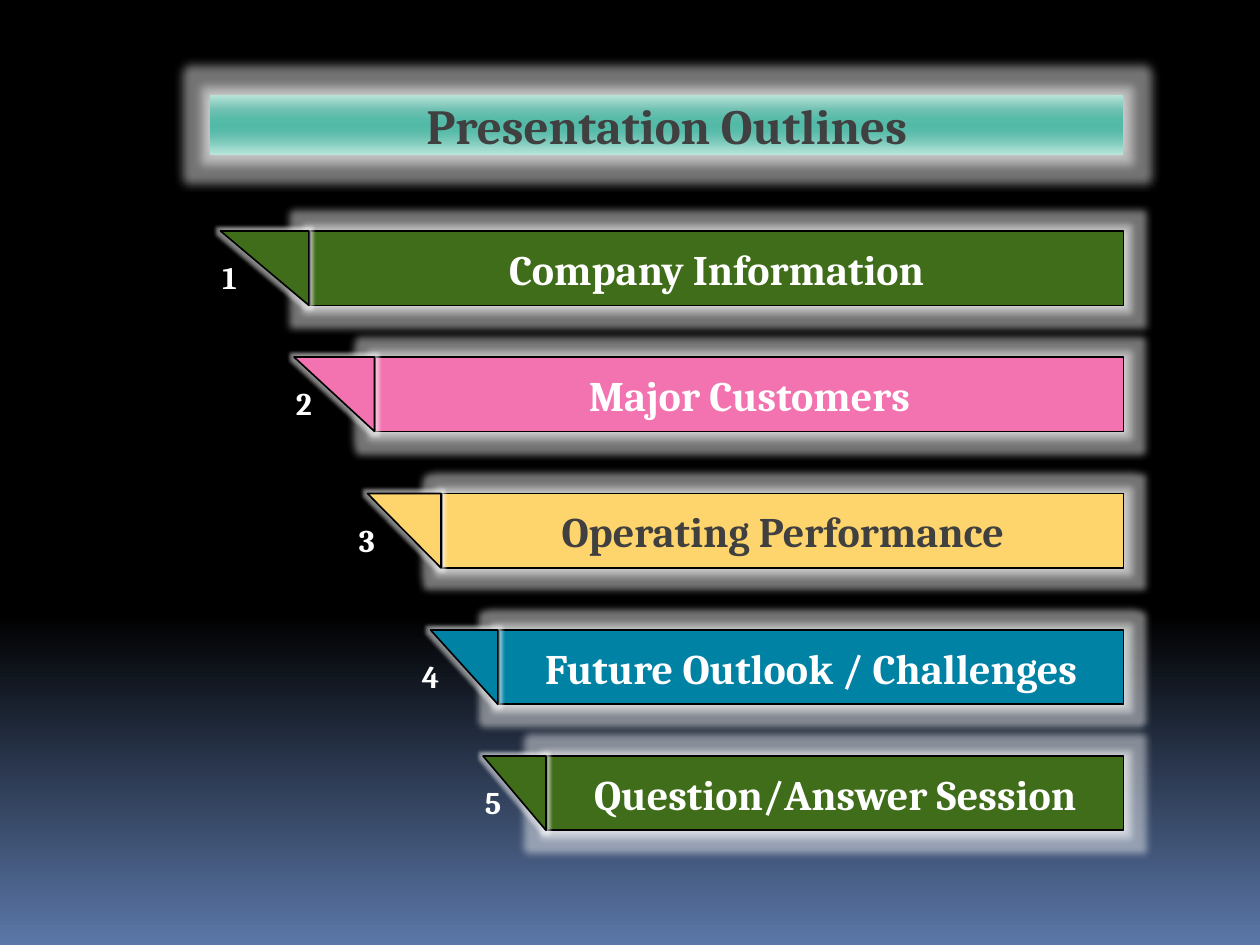
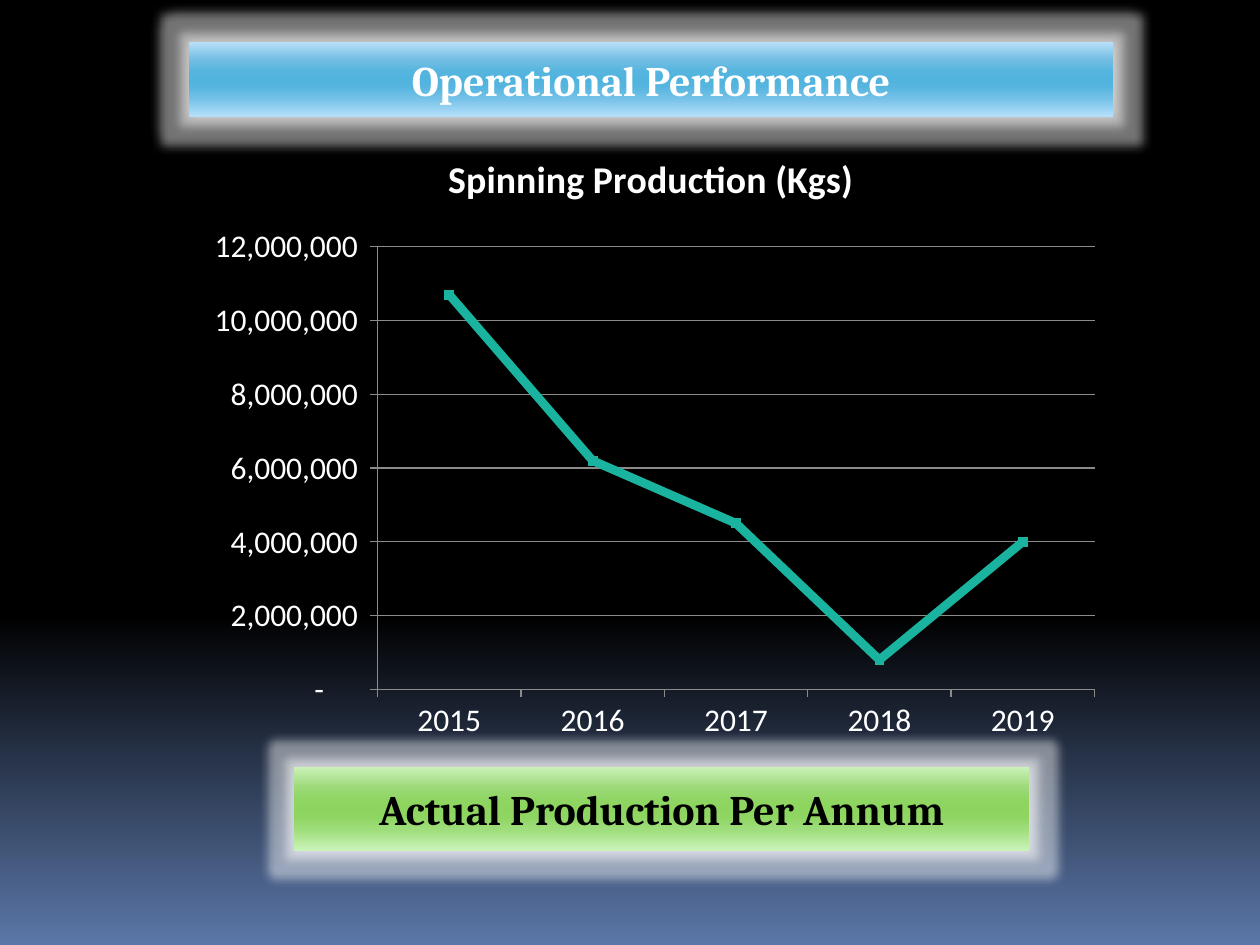
from lxml.etree import SubElement
from pptx import Presentation
from pptx.chart.data import CategoryChartData
from pptx.dml.color import RGBColor
from pptx.enum.chart import XL_CHART_TYPE, XL_MARKER_STYLE, XL_TICK_MARK
from pptx.enum.shapes import MSO_SHAPE
from pptx.enum.text import MSO_ANCHOR, PP_ALIGN
from pptx.oxml.ns import qn
from pptx.util import Pt

WHITE = RGBColor(0xFF, 0xFF, 0xFF)
BLACK = RGBColor(0x00, 0x00, 0x00)
CHARCOAL = RGBColor(0x40, 0x40, 0x40)
GREEN = RGBColor(0x3F, 0x6D, 0x19)
PINK = RGBColor(0xF2, 0x73, 0xAF)
YELLOW = RGBColor(0xFE, 0xD4, 0x6C)
BLUE = RGBColor(0x00, 0x82, 0xA5)
TEAL = RGBColor(0x1A, 0xB3, 0x9F)
GRID_GREY = RGBColor(0x8B, 0x8B, 0x8B)


def gradient(positions, *codes):
    return [(at, RGBColor.from_string(code)) for at, code in zip(positions, codes)]


BANNER_STOPS = (0, 25, 40, 50, 60, 75, 100)
NIGHT = gradient((0, 65, 100), "000000", "000000", "5B77A8")
TEAL_SHEEN = gradient(BANNER_STOPS, "BBE5DB", "71C1B2", "57BBA9", "53BAA8",
                      "57BBA9", "74C6B6", "B9E6DC")
BLUE_SHEEN = gradient(BANNER_STOPS, "B7DFF8", "70BCE2", "55B5DF", "50B4DF",
                      "55B5DF", "72C0E7", "B4DFFB")
GREEN_SHEEN = gradient(BANNER_STOPS, "CCF2BB", "9CD979", "8FD562", "8DD55F",
                       "8FD562", "9EDD7B", "CBF4B9")

HEADING_FONT = "Cambria"
CHART_FONT = "Calibri"
BAR_HEIGHT = 42.5
BAR_RIGHT = 642

# label, fill, text colour, top, flag left, bar left, number left
OUTLINE = [
    ("Company Information", GREEN, WHITE, 132, 126, 177, 120),
    ("Major Customers", PINK, WHITE, 204, 168, 214.5, 162),
    ("Operating Performance", YELLOW, CHARCOAL, 282, 210, 252.5, 198),
    ("Future Outlook / Challenges", BLUE, WHITE, 360, 246, 285, 234),
    ("Question/Answer Session", GREEN, WHITE, 432, 276, 312.5, 270),
]

PRODUCTION = {"2015": 10700000, "2016": 6200000, "2017": 4500000,
              "2018": 800000, "2019": 4000000}


def fill_gradient(fill, owner, stops):
    """Fill from top to bottom with any number of stops."""
    fill.gradient()
    fill.gradient_angle = 270
    stop_list = next(owner.element.iter(qn("a:gsLst")))
    for old_stop in list(stop_list):
        stop_list.remove(old_stop)
    for at, colour in stops:
        stop = SubElement(stop_list, qn("a:gs"), pos=str(at * 1000))
        SubElement(stop, qn("a:srgbClr"), val=str(colour))


def add_halo(shape, glow, blur):
    """Surround the shape with a white glow and a softer white shadow."""
    shape.shadow.inherit = False
    effects = shape.element.spPr.find(qn("a:effectLst"))
    ring = SubElement(effects, qn("a:glow"), rad=str(Pt(glow)))
    haze = SubElement(effects, qn("a:outerShdw"), blurRad=str(Pt(blur)),
                      dist="0", algn="ctr", rotWithShape="0")
    for effect in (ring, haze):
        tint = SubElement(effect, qn("a:srgbClr"), val=str(WHITE))
        SubElement(tint, qn("a:alpha"), val="45000")


def write(shape, text, size, colour, align):
    paragraph = shape.text_frame.paragraphs[0]
    paragraph.alignment = align
    run = paragraph.add_run()
    run.text = text
    font = run.font
    font.name, font.size, font.bold = HEADING_FONT, Pt(size), True
    font.color.rgb = colour


def add_banner(slide, box, text, sheen, colour=WHITE, size=24):
    banner = slide.shapes.add_shape(MSO_SHAPE.RECTANGLE, *map(Pt, box))
    fill_gradient(banner.fill, banner, sheen)
    banner.line.fill.background()
    add_halo(banner, glow=11, blur=5)
    banner.text_frame.vertical_anchor = MSO_ANCHOR.MIDDLE
    write(banner, text, size, colour, PP_ALIGN.CENTER)


def add_outline_row(slide, number, label, fill, colour, top, flag_left, bar_left, number_left):
    row = slide.shapes.add_group_shape()

    def add_part(preset, left, right, glow):
        part = row.shapes.add_shape(preset, Pt(left), Pt(top),
                                    Pt(right - left), Pt(BAR_HEIGHT))
        part.fill.solid()
        part.fill.fore_color.rgb = fill
        part.line.color.rgb = BLACK
        part.line.width = Pt(0.94)
        add_halo(part, glow, blur=3)
        return part

    bar = add_part(MSO_SHAPE.RECTANGLE, bar_left, BAR_RIGHT, glow=8)
    bar.text_frame.vertical_anchor = MSO_ANCHOR.MIDDLE
    write(bar, label, 24, colour, PP_ALIGN.CENTER)
    flag = add_part(MSO_SHAPE.RIGHT_TRIANGLE, flag_left, bar_left - 0.5, glow=4)
    flag.rotation = 180

    numeral = slide.shapes.add_textbox(Pt(number_left), Pt(top + 12), Pt(24), Pt(29))
    numeral.text_frame.word_wrap = True
    write(numeral, str(number), 18, WHITE, PP_ALIGN.LEFT)


def add_production_chart(slide, box):
    title = "Spinning Production (Kgs)"
    data = CategoryChartData()
    data.categories = PRODUCTION.keys()
    data.add_series(title, PRODUCTION.values())
    chart = slide.shapes.add_chart(XL_CHART_TYPE.LINE_MARKERS, *map(Pt, box), data).chart
    chart.has_legend = False
    chart.font.name, chart.font.size = CHART_FONT, Pt(18)
    chart.font.color.rgb = WHITE

    chart.has_title = True
    heading = chart.chart_title.text_frame.paragraphs[0].add_run()
    heading.text = title
    heading.font.name, heading.font.size, heading.font.bold = CHART_FONT, Pt(21.6), True
    heading.font.color.rgb = WHITE

    years, kilograms = chart.category_axis, chart.value_axis
    kilograms.has_major_gridlines = True
    kilograms.minimum_scale, kilograms.maximum_scale = 0, 12000000
    kilograms.major_unit = 2000000
    kilograms.tick_labels.number_format = '_(* #,##0_);_(* \\(#,##0\\);_(* "-"??_);_(@_)'
    kilograms.tick_labels.number_format_is_linked = False
    for axis in (years, kilograms):
        axis.major_tick_mark = XL_TICK_MARK.OUTSIDE
    for ruled in (years, kilograms, kilograms.major_gridlines):
        ruled.format.line.color.rgb = GRID_GREY
        ruled.format.line.width = Pt(0.75)

    plot = chart.plots[0]
    plot.vary_by_categories = False
    trend = plot.series[0]
    trend.smooth = False
    trend.format.line.color.rgb = TEAL
    trend.format.line.width = Pt(5)
    marker = trend.marker
    marker.style, marker.size = XL_MARKER_STYLE.SQUARE, 5
    marker.format.fill.solid()
    marker.format.fill.fore_color.rgb = TEAL
    marker.format.line.color.rgb = TEAL


def add_night_slide(deck):
    slide = deck.slides.add_slide(deck.slide_layouts[6])
    fill_gradient(slide.background.fill, slide, NIGHT)
    return slide


def build_outline_slide(deck):
    slide = add_night_slide(deck)
    add_banner(slide, (120, 54, 522, 34.5), "Presentation Outlines",
               TEAL_SHEEN, CHARCOAL, size=28)
    for number, row in enumerate(OUTLINE, start=1):
        add_outline_row(slide, number, *row)


def build_production_slide(deck):
    slide = add_night_slide(deck)
    add_banner(slide, (108, 24, 528, 42.5), "Operational Performance", BLUE_SHEEN)
    add_production_chart(slide, (108, 72, 528, 358))
    add_banner(slide, (168, 438, 420, 48), "Actual Production Per Annum", GREEN_SHEEN, BLACK)


def main():
    deck = Presentation()
    deck.slide_width, deck.slide_height = Pt(720), Pt(540)
    build_outline_slide(deck)
    build_production_slide(deck)
    deck.save("out.pptx")


if __name__ == "__main__":
    main()
